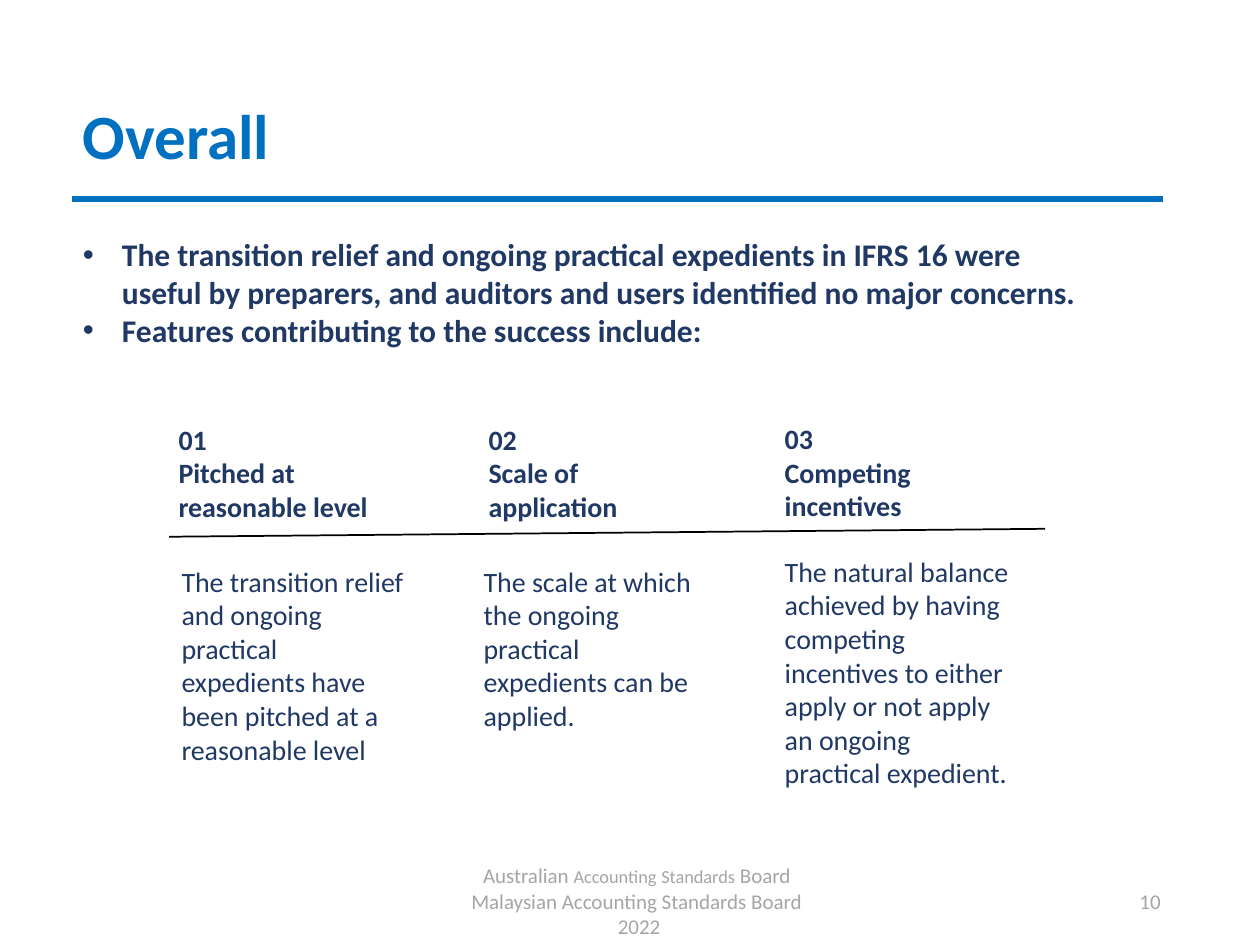
import dataclasses
import typing

import pptx
import pptx.dml.color
import pptx.enum.shapes
import pptx.enum.text
import pptx.oxml
import pptx.oxml.ns
import pptx.util
from pptx.util import Cm

HUES = {"blue": "0070C0", "navy": "203864", "gray": "A5A5A5", "black": "000000"}
FONT = "Calibri"
ALIGN = pptx.enum.text.PP_ALIGN
ANCHOR = pptx.enum.text.MSO_ANCHOR
FIT = pptx.enum.text.MSO_AUTO_SIZE


class Box(typing.NamedTuple):
    left: float
    top: float
    width: float
    height: float


class Run(typing.NamedTuple):
    words: str
    size: float


@dataclasses.dataclass
class Topic:
    head: list[str]
    head_box: Box
    body: str
    body_box: Box


def color(name: str) -> pptx.dml.color.RGBColor:
    return pptx.dml.color.RGBColor.from_string(HUES[name])


def add_bullet(para, gap: float) -> None:
    props = para._p.get_or_add_pPr()
    props.set("marL", str(Cm(gap)))
    props.set("indent", str(-Cm(gap)))
    font = pptx.oxml.ns.qn("a:buFont")
    mark = pptx.oxml.ns.qn("a:buChar")
    props.append(props.makeelement(font, {"typeface": "Arial"}))
    props.append(props.makeelement(mark, {"char": "•"}))


def add_text(shapes, box: Box, paras: list, *, size: float = 16, hue: str = "navy",
             bold: bool = False, align=ALIGN.LEFT, anchor=ANCHOR.TOP,
             grow: bool = False, space: float | None = None,
             bullet: float = 0) -> None:
    frame = shapes.add_textbox(*map(Cm, box)).text_frame
    frame.word_wrap = True
    frame.auto_size = FIT.SHAPE_TO_FIT_TEXT if grow else FIT.NONE
    frame.vertical_anchor = anchor
    for i, item in enumerate(paras):
        para = frame.add_paragraph() if i else frame.paragraphs[0]
        para.alignment = align
        if space:
            para.line_spacing = space
        if bullet:
            add_bullet(para, bullet)
        for part in [Run(item, size)] if isinstance(item, str) else item:
            run = para.add_run()
            run.text = part.words
            run.font.name = FONT
            run.font.size = pptx.util.Pt(part.size)
            run.font.bold = bold
            run.font.color.rgb = color(hue)


def add_line(shapes, start: tuple[float, float], end: tuple[float, float],
             hue: str, width: float) -> None:
    kind = pptx.enum.shapes.MSO_CONNECTOR.STRAIGHT
    line = shapes.add_connector(kind, *map(Cm, start + end))
    line.line.color.rgb = color(hue)
    line.line.width = pptx.util.Pt(width)
    props = line._element.spPr
    props.append(props.makeelement(pptx.oxml.ns.qn("a:effectLst"), {}))


TOPICS = [
    Topic(["01", "Pitched at reasonable level"], Box(3.35, 8.39, 4.7, 2.31),
          "The transition relief and ongoing practical expedients have been "
          "pitched at a reasonable level", Box(3.41, 11.25, 5.05, 4.37)),
    Topic(["02", "Scale of application"], Box(9.6, 8.39, 3.61, 2.31),
          "The scale at which the ongoing practical expedients can be applied.",
          Box(9.5, 11.25, 5.05, 4.14)),
    Topic(["03", "Competing incentives"], Box(15.57, 8.38, 3.61, 3),
          "The natural balance achieved by having competing incentives to "
          "either apply or not apply an ongoing practical expedient.",
          Box(15.57, 11.05, 5.05, 5.05)),
]


def main() -> None:
    deck = pptx.Presentation()
    deck.slide_width, deck.slide_height = Cm(25.4), Cm(19.05)
    shapes = deck.slides.add_slide(deck.slide_layouts[6]).shapes

    add_text(shapes, Box(1.42, 0.97, 21.89, 3.68), ["Overall"], size=36,
             hue="blue", bold=True, anchor=ANCHOR.MIDDLE, space=0.9)
    add_line(shapes, (1.45, 4.01), (23.44, 4.01), "blue", 3)
    add_text(shapes, Box(1.42, 4.62, 20.73, 2.57), [
        "The transition relief and ongoing practical expedients in IFRS 16 were "
        "useful by preparers, and auditors and users identified no major concerns.",
        "Features contributing to the success include:",
    ], size=18, bold=True, grow=True, bullet=0.79)

    group = shapes.add_group_shape().shapes
    for topic in TOPICS:
        add_text(group, topic.head_box, topic.head, bold=True, grow=True)
        add_text(group, topic.body_box, [topic.body], grow=True)
    add_line(group, (3.41, 10.82), (21.07, 10.66), "black", 1)

    add_text(shapes, Box(8.59, 17.78, 8.59, 0.76), [
        [Run("Australian ", 12), Run("Accounting", 10.5), Run(" ", 12),
         Run("Standards", 10.5), Run(" Board ", 12)],
        "Malaysian Accounting Standards Board ",
        "2022",
    ], size=12, hue="gray", align=ALIGN.CENTER, anchor=ANCHOR.MIDDLE)
    add_text(shapes, Box(17.93, 17.65, 5.72, 1.02), ["10"], size=12, hue="gray",
             align=ALIGN.RIGHT, anchor=ANCHOR.MIDDLE)
    deck.save("out.pptx")


if __name__ == "__main__":
    main()
